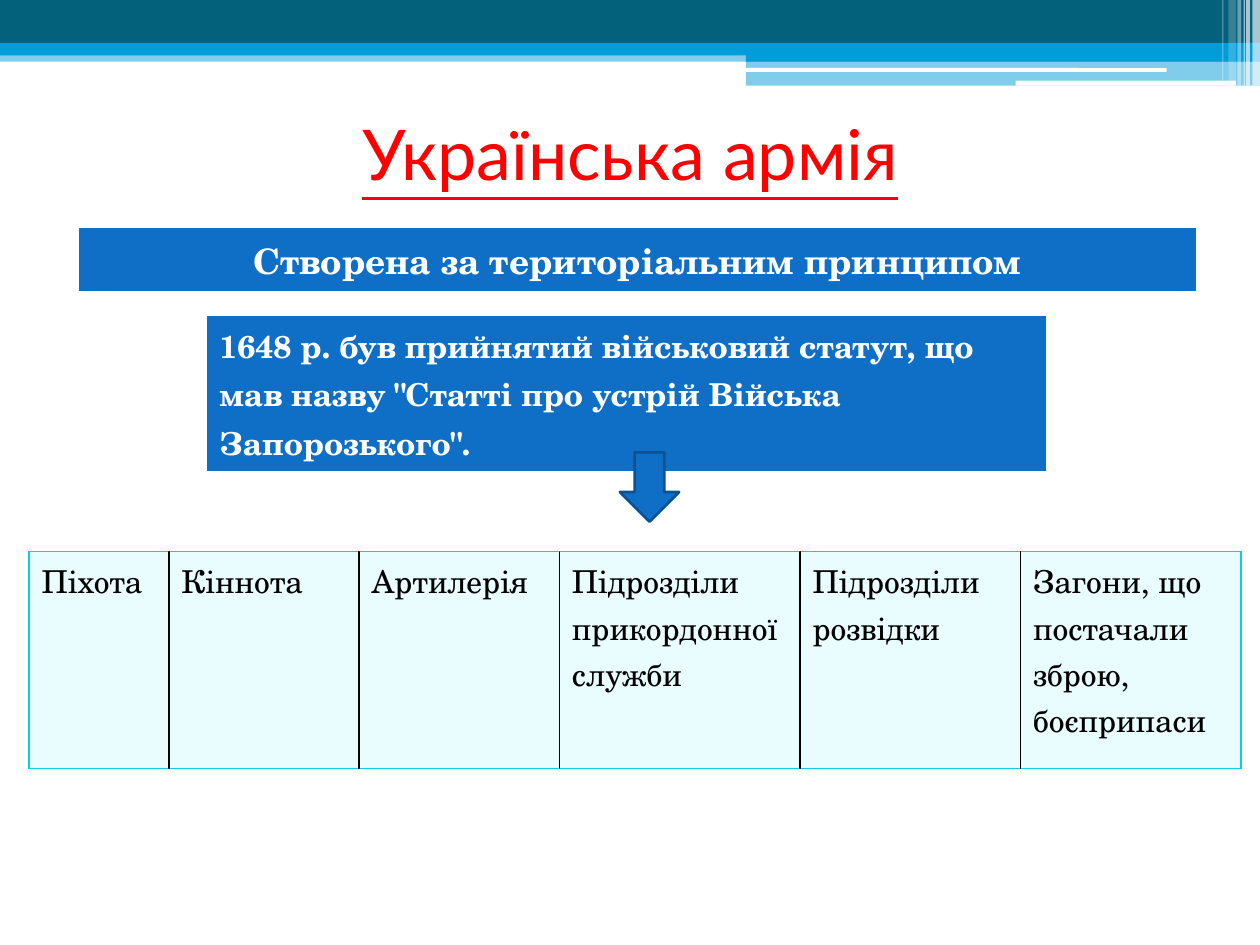
from lxml import etree
from pptx import Presentation
from pptx.dml.color import RGBColor
from pptx.enum.shapes import MSO_SHAPE
from pptx.enum.text import MSO_ANCHOR, PP_ALIGN
from pptx.oxml.ns import qn
from pptx.util import Inches, Pt

RECTANGLE = MSO_SHAPE.RECTANGLE
ROUNDED = MSO_SHAPE.ROUNDED_RECTANGLE
DOWN_ARROW = MSO_SHAPE.DOWN_ARROW
MIDDLE = MSO_ANCHOR.MIDDLE
CENTER, LEFT = PP_ALIGN.CENTER, PP_ALIGN.LEFT

WHITE = RGBColor(0xFF, 0xFF, 0xFF)
BLACK = RGBColor(0x00, 0x00, 0x00)
RED = RGBColor(0xFF, 0x00, 0x00)
TEAL = RGBColor(0x04, 0x61, 0x7B)
SKY = RGBColor(0x00, 0x9D, 0xD9)
BLUE = RGBColor(0x0F, 0x6F, 0xC6)
DARK_BLUE = RGBColor(0x0B, 0x52, 0x92)
CYAN = RGBColor(0x0B, 0xD0, 0xD9)
PALE_CYAN = RGBColor(0xE9, 0xFD, 0xFF)

TITLE_FONT = "Lato"
BODY_FONT = "TeX Gyre Schola"

BANDS = [
    (RECTANGLE, (0, 0.4, 10, 0.09), SKY, 50),
    (RECTANGLE, (0, 0, 10, 0.34), TEAL, 100),
    (RECTANGLE, (0, 0.34, 10, 0.1), SKY, 100),
    (RECTANGLE, (5.92, 0.39, 4.08, 0.1), SKY, 100),
    (RECTANGLE, (5.92, 0.48, 4.08, 0.2), SKY, 50),
    (ROUNDED, (5.91, 0.54, 3.35, 0.03), WHITE, 100),
    (ROUNDED, (8.06, 0.64, 1.75, 0.04), WHITE, 100),
]
STRIPES = [
    (9.94, 0.06, 0.68, 65),
    (9.89, 0.03, 0.68, 65),
    (9.87, 0.01, 0.68, 60),
    (9.82, 0.03, 0.68, 40),
    (9.75, 0.06, 0.64, 20),
    (9.7, 0.01, 0.64, 30),
]
UNIT_COLUMNS = [
    ("Піхота", 1.11),
    ("Кіннота", 1.51),
    ("Артилерія", 1.59),
    ("Підрозділи прикордонної служби", 1.91),
    ("Підрозділи розвідки", 1.75),
    ("Загони, що постачали зброю, боєприпаси", 1.75),
]


def to_inches(box):
    return [Inches(length) for length in box]


def write_text(text_frame, text, color, alignment, font_values):
    paragraph = text_frame.paragraphs[0]
    paragraph.alignment = alignment
    run = paragraph.add_run()
    run.text = text
    run.font.color.rgb = color
    for name, value in font_values.items():
        setattr(run.font, name, value)


def add_filled_shape(slide, kind, box, color, opacity=100):
    shape = slide.shapes.add_shape(kind, *to_inches(box))
    shape.shadow.inherit = False
    shape.fill.solid()
    shape.fill.fore_color.rgb = color
    shape.line.fill.background()
    if opacity < 100:
        color_element = shape.fill._xPr.find(".//" + qn("a:srgbClr"))
        etree.SubElement(color_element, qn("a:alpha"), val=str(opacity * 1000))
    return shape


def add_header(slide):
    for kind, box, color, opacity in BANDS:
        add_filled_shape(slide, kind, box, color, opacity)
    for left, width, height, opacity in STRIPES:
        add_filled_shape(slide, RECTANGLE, (left, 0, width, height), WHITE, opacity)


def add_title(slide, box, text):
    title = slide.shapes.title
    title.left, title.top, title.width, title.height = to_inches(box)
    title.text_frame.vertical_anchor = MIDDLE
    font_values = {"name": TITLE_FONT, "size": Pt(40), "underline": True}
    write_text(title.text_frame, text, RED, CENTER, font_values)


def set_borders(cell, borders):
    properties = cell._tc.get_or_add_tcPr()
    for side in "LRTB":
        color, width = borders[side]
        line = etree.SubElement(properties, qn("a:ln" + side), w=str(Pt(width)))
        fill = etree.SubElement(line, qn("a:solidFill"))
        etree.SubElement(fill, qn("a:srgbClr"), val=str(color))


def add_plain_table(slide, box, column_widths):
    table = slide.shapes.add_table(1, len(column_widths), *to_inches(box)).table
    table.first_row = table.horz_banding = False
    for column, width in zip(table.columns, column_widths):
        column.width = Inches(width)
    return table


def fill_cell(cell, text, fill, borders, color, alignment, font_values):
    set_borders(cell, borders)
    cell.fill.solid()
    cell.fill.fore_color.rgb = fill
    write_text(cell.text_frame, text, color, alignment, {"name": BODY_FONT, **font_values})


def add_banner(slide, box, text, size, alignment):
    table = add_plain_table(slide, box, [box[2]])
    borders = {"L": (WHITE, 1), "R": (WHITE, 1), "T": (WHITE, 1), "B": (WHITE, 3)}
    font_values = {"size": Pt(size), "bold": True}
    fill_cell(table.cell(0, 0), text, BLUE, borders, WHITE, alignment, font_values)


def add_arrow(slide, box):
    arrow = add_filled_shape(slide, DOWN_ARROW, box, BLUE)
    arrow.line.color.rgb = DARK_BLUE
    arrow.line.width = Pt(1.5)


def add_units(slide, box):
    table = add_plain_table(slide, box, [width for _, width in UNIT_COLUMNS])
    outer, inner = (CYAN, 0.75), (BLACK, 1)
    last = len(UNIT_COLUMNS) - 1
    for index, (text, _) in enumerate(UNIT_COLUMNS):
        borders = {
            "L": outer if index == 0 else inner,
            "R": outer if index == last else inner,
            "T": outer,
            "B": outer,
        }
        font_values = {"size": Pt(18), "bold": False}
        fill_cell(table.cell(0, index), text, PALE_CYAN, borders, BLACK, LEFT, font_values)


def main():
    presentation = Presentation()
    presentation.slide_width, presentation.slide_height = Inches(10), Inches(7.5)
    slide = presentation.slides.add_slide(presentation.slide_layouts[5])
    add_header(slide)
    add_title(slide, (0.5, 0.78, 9, 0.86), "Українська армія")
    add_banner(slide, (0.62, 1.8, 8.88, 0.41),
               "Створена за територіальним принципом", 20, CENTER)
    add_banner(slide, (1.64, 2.5, 6.67, 0.41),
               "1648 р. був прийнятий військовий статут, що мав назву "
               "\"Статті про устрій Війська Запорозького\".", 18, LEFT)
    add_arrow(slide, (4.92, 3.59, 0.47, 0.55))
    add_units(slide, (0.23, 4.38, 9.62, 1.72))
    presentation.save("out.pptx")


if __name__ == "__main__":
    main()
